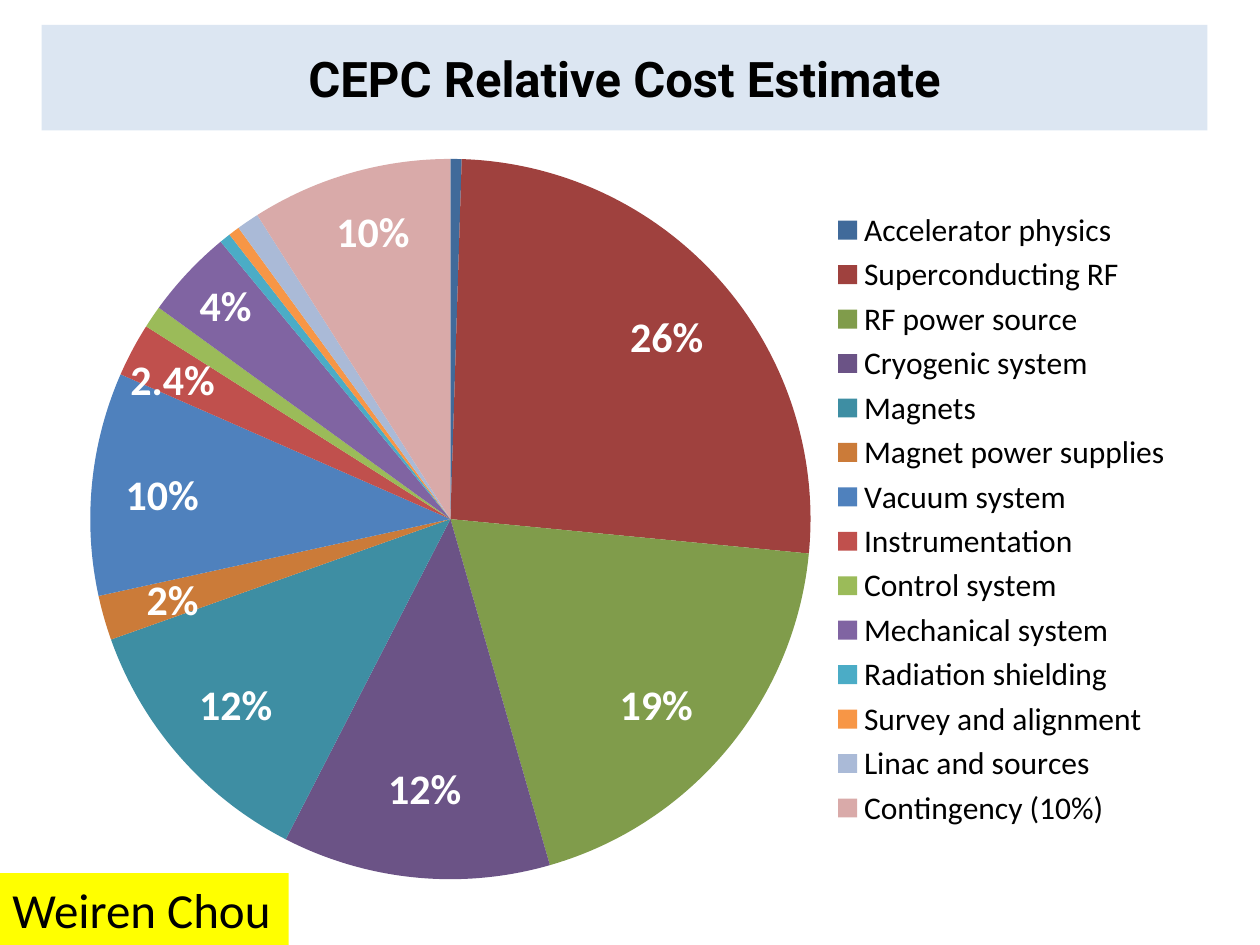
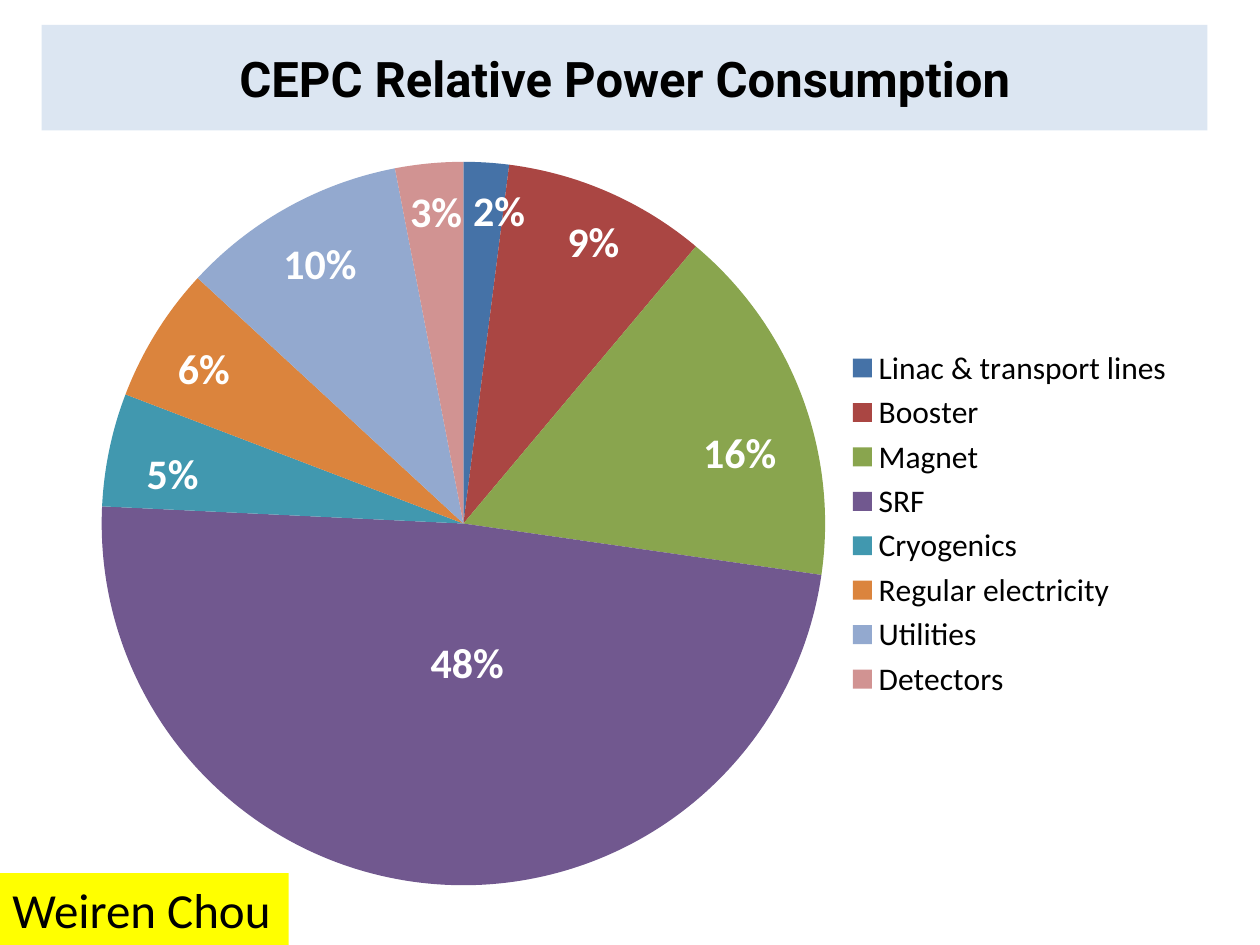
import pptx
import pptx.chart.data
import pptx.dml.color
import pptx.enum.chart
import pptx.enum.shapes
import pptx.enum.text
import pptx.util

Cm = pptx.util.Cm
PP_ALIGN = pptx.enum.text.PP_ALIGN
AUTO_SIZE = pptx.enum.text.MSO_AUTO_SIZE

BLACK, WHITE = "000000", "FFFFFF"
TITLE_BAND, NAME_BAND = "DCE6F2", "FFFF00"
TITLE_FONT = dict(name="Roboto", size=28, bold=True, color=BLACK)
LABEL_FONT = dict(name="Calibri", size=24, bold=True, color=WHITE)
NAME_FONT = dict(name="Calibri", size=28, bold=False, color=BLACK)
CHART_FONT = dict(name="Calibri", size=10, color=BLACK)
LEGEND_FONT = dict(name="Calibri", size=18, color=BLACK)

# Slices: category, value, colour. Labels: text, left and top in cm.
SLIDES = [
    dict(
        title="CEPC Relative Cost Estimate",
        chart_box=(1.47, 2.31, 22.43, 16.31),
        slices=[
            ("Accelerator physics", 0.5, "406A9A"),
            ("Superconducting RF", 26, "9F413E"),
            ("RF power source", 19, "809C4B"),
            ("Cryogenic system", 12, "6B5386"),
            ("Magnets", 12, "3E8EA3"),
            ("Magnet power supplies", 2, "CB7B39"),
            ("Vacuum system", 10, "4F81BD"),
            ("Instrumentation", 2.4, "C0504D"),
            ("Control system", 1, "9BBB59"),
            ("Mechanical system", 4, "8064A2"),
            ("Radiation shielding", 0.5, "4BACC6"),
            ("Survey and alignment", 0.5, "F79646"),
            ("Linac and sources", 1, "AABAD7"),
            ("Contingency (10%)", 9, "D9AAA9"),
        ],
        labels=[
            ("26%", 12.07, 6.12), ("19%", 11.86, 13.54), ("12%", 7.19, 15.24),
            ("12%", 3.38, 13.54), ("10%", 1.9, 9.32), ("10%", 6.15, 4.01),
            ("4%", 3.18, 5.51), ("2%", 2.11, 11.43), ("2.4%", 2.11, 6.99),
        ],
    ),
    dict(
        title="CEPC Relative Power Consumption",
        chart_box=(1.7, 2.54, 22.23, 16.03),
        slices=[
            ("Linac & transport lines", 2, "4572A7"),
            ("Booster", 9, "AA4643"),
            ("Magnet", 16, "89A54E"),
            ("SRF", 48, "71588F"),
            ("Cryogenics", 5, "4198AF"),
            ("Regular electricity", 6, "DB843D"),
            ("Utilities", 10, "93A9CF"),
            ("Detectors", 3, "D19392"),
        ],
        labels=[
            ("9%", 10.59, 4.22), ("16%", 13.54, 8.46), ("5%", 2.11, 8.89),
            ("10%", 5.08, 4.65), ("6%", 2.74, 6.78), ("48%", 8.05, 12.7),
            ("2%", 8.69, 3.58), ("3%", 7.42, 3.61),
        ],
    ),
]


def rgb(value):
    return pptx.dml.color.RGBColor.from_string(value)


def set_fill(fill, color):
    fill.solid()
    fill.fore_color.rgb = rgb(color)


def format_font(font, values):
    for key, value in values.items():
        if key == "color":
            font.color.rgb = rgb(value)
        else:
            setattr(font, key, pptx.util.Pt(value) if key == "size" else value)


def write_text(sp, text, font, align, wrap=True):
    tf = sp.text_frame
    settings = dict(word_wrap=wrap, auto_size=AUTO_SIZE.SHAPE_TO_FIT_TEXT,
                    margin_left=Cm(0.25), margin_right=Cm(0.25),
                    margin_top=Cm(0.13), margin_bottom=Cm(0.13))
    for key, value in settings.items():
        setattr(tf, key, value)
    p = tf.paragraphs[0]
    p.alignment = align
    r = p.add_run()
    r.text = text
    format_font(r.font, font)


def add_title(s, text):
    sp = s.shapes.title
    sp.left, sp.top, sp.width, sp.height = map(Cm, (0.84, 0.84, 23.5, 1.45))
    set_fill(sp.fill, TITLE_BAND)
    write_text(sp, text, TITLE_FONT, PP_ALIGN.CENTER)


def add_pie(s, box, slices):
    categories, values, colors = zip(*slices)
    data = pptx.chart.data.CategoryChartData()
    data.categories = categories
    data.add_series("Series 1", values)
    chart = s.shapes.add_chart(pptx.enum.chart.XL_CHART_TYPE.PIE,
                               *map(Cm, box), data).chart
    chart.has_title = False
    format_font(chart.font, CHART_FONT)
    chart.has_legend = True
    chart.legend.position = pptx.enum.chart.XL_LEGEND_POSITION.RIGHT
    chart.legend.include_in_layout = False
    format_font(chart.legend.font, LEGEND_FONT)
    plot = chart.plots[0]
    plot.vary_by_categories = True
    for i, color in enumerate(colors):
        point = plot.series[0].points[i].format
        set_fill(point.fill, color)
        point.line.fill.background()


def add_label(s, text, left, top):
    sp = s.shapes.add_textbox(Cm(left), Cm(top), Cm(2.74), Cm(1.27))
    write_text(sp, text, LABEL_FONT, PP_ALIGN.CENTER)


def add_name_band(s):
    sp = s.shapes.add_shape(pptx.enum.shapes.MSO_SHAPE.RECTANGLE,
                            *map(Cm, (0, 17.6, 5.82, 1.45)))
    sp.shadow.inherit = False
    set_fill(sp.fill, NAME_BAND)
    sp.line.fill.background()
    write_text(sp, "Weiren Chou", NAME_FONT, PP_ALIGN.LEFT, wrap=False)


def main():
    prs = pptx.Presentation()
    prs.slide_width, prs.slide_height = Cm(25.4), Cm(19.05)
    for content in SLIDES:
        s = prs.slides.add_slide(prs.slide_layouts.get_by_name("Title Only"))
        add_title(s, content["title"])
        add_pie(s, content["chart_box"], content["slices"])
        for label in content["labels"]:
            add_label(s, *label)
        add_name_band(s)
    prs.save("out.pptx")


if __name__ == "__main__":
    main()
